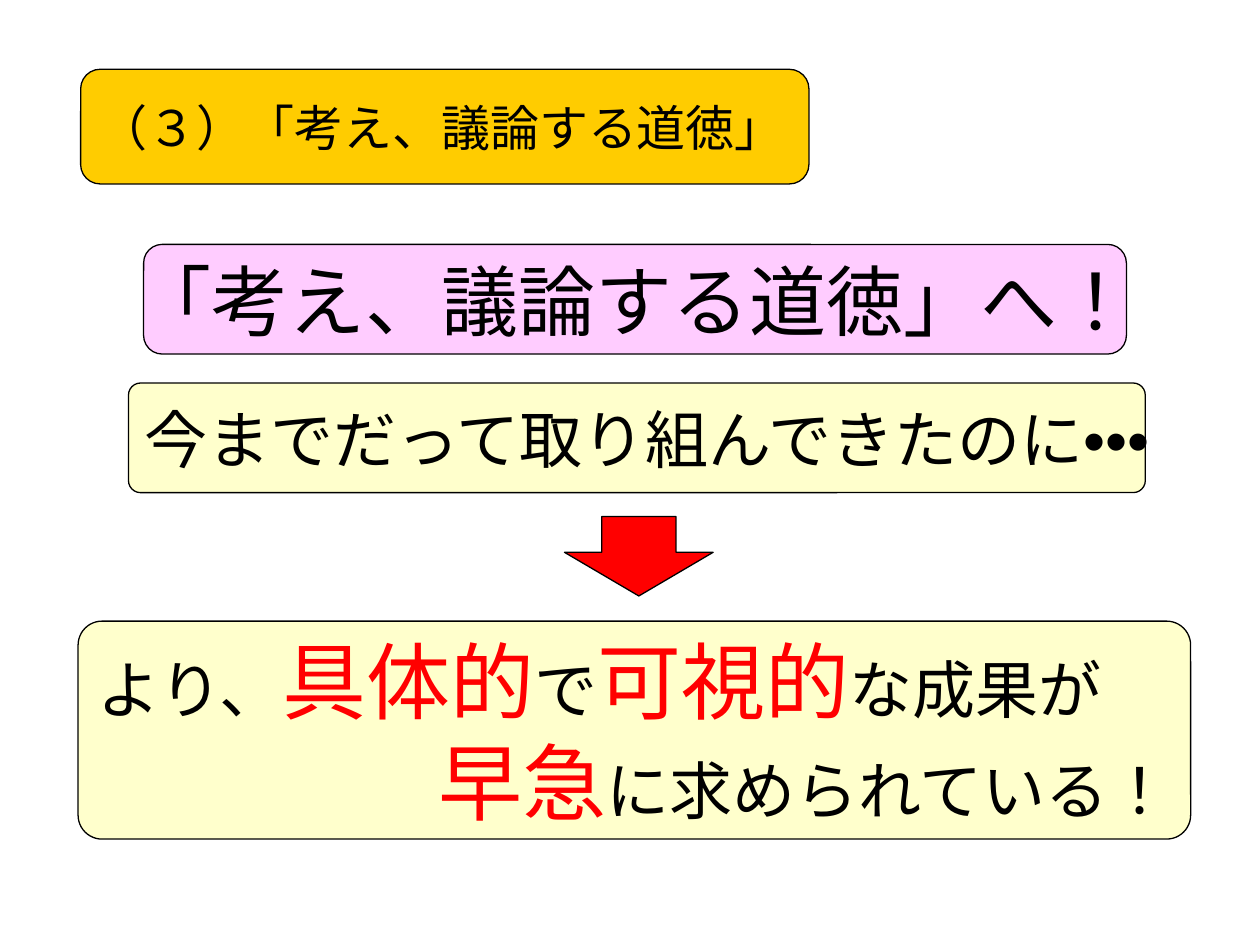
from lxml import etree
from pptx import Presentation
from pptx.dml.color import RGBColor
from pptx.enum.lang import MSO_LANGUAGE_ID as LANG
from pptx.enum.shapes import MSO_SHAPE as SHAPE
from pptx.enum.text import MSO_ANCHOR as ANCHOR, PP_ALIGN as ALIGN
from pptx.oxml.ns import qn
from pptx.util import Inches, Pt

COLORS = {
    "black": "000000",
    "red": "FF0000",
    "gold": "FFCC00",
    "pink": "FFCCFF",
    "cream": "FFFFCC",
}
BODY = "Arial"
STRONG = "Noto Sans CJK JP"


def color(name):
    return RGBColor.from_string(COLORS[name])


def add_shape(s, kind, box, fill, adjustments):
    sp = s.shapes.add_shape(kind, *(Inches(v) for v in box))
    sp.shadow.inherit = False
    sp.fill.solid()
    sp.fill.fore_color.rgb = color(fill)
    sp.line.color.rgb = color("black")
    sp.line.width = Pt(0.75)
    for i, value in enumerate(adjustments):
        sp.adjustments[i] = value
    return sp


def add_run(p, text, size, font=BODY, ink="black"):
    r = p.add_run()
    r.text = text
    r.font.size = Pt(size)
    r.font.name = font
    r.font.color.rgb = color(ink)
    r.font.language_id = LANG.JAPANESE
    ea = etree.SubElement(r.font._element, qn("a:ea"))
    ea.set("typeface", font)


def add_panel(s, box, fill, radius, paragraphs):
    sp = add_shape(s, SHAPE.ROUNDED_RECTANGLE, box, fill, [radius])
    tf = sp.text_frame
    tf.word_wrap = False
    tf.vertical_anchor = ANCHOR.MIDDLE
    for i, (align, runs) in enumerate(paragraphs):
        p = tf.add_paragraph() if i else tf.paragraphs[0]
        p.alignment = align
        for run in runs:
            add_run(p, *run)


def add_heading(s, box):
    runs = [("（３）「考え、議論する道徳」", 28)]
    add_panel(s, box, "gold", 0.17, [(ALIGN.LEFT, runs)])


def add_slogan(s, box):
    runs = [("「考え、議論する道徳」へ！", 44, STRONG)]
    add_panel(s, box, "pink", 0.17, [(ALIGN.CENTER, runs)])


def add_question(s, box):
    runs = [("今までだって取り組んできたのに•••", 36)]
    add_panel(s, box, "cream", 0.11, [(ALIGN.LEFT, runs)])


def add_arrow(s, box):
    sp = add_shape(s, SHAPE.UP_ARROW, box, "red", [0.5, 0.55])
    sp.rotation = 180


def add_conclusion(s, box):
    emphasis = (48, STRONG, "red")
    first = [
        ("より、", 36),
        ("具体的", *emphasis),
        ("で", 36),
        ("可視的", *emphasis),
        ("な成果が", 36),
    ]
    second = [("早急", *emphasis), ("に求められている！", 36)]
    add_panel(s, box, "cream", 0.11, [(ALIGN.LEFT, first), (ALIGN.RIGHT, second)])


def main():
    prs = Presentation()
    prs.slide_width = Inches(10)
    prs.slide_height = Inches(7.5)
    s = prs.slides.add_slide(prs.slide_layouts[6])
    add_conclusion(s, (0.62, 4.93, 8.83, 1.73))
    add_heading(s, (0.64, 0.55, 5.78, 0.91))
    add_slogan(s, (1.14, 1.94, 7.8, 0.87))
    add_question(s, (1.02, 3.04, 8.07, 0.87))
    add_arrow(s, (4.48, 4.1, 1.18, 0.63))
    prs.save("out.pptx")


if __name__ == "__main__":
    main()
